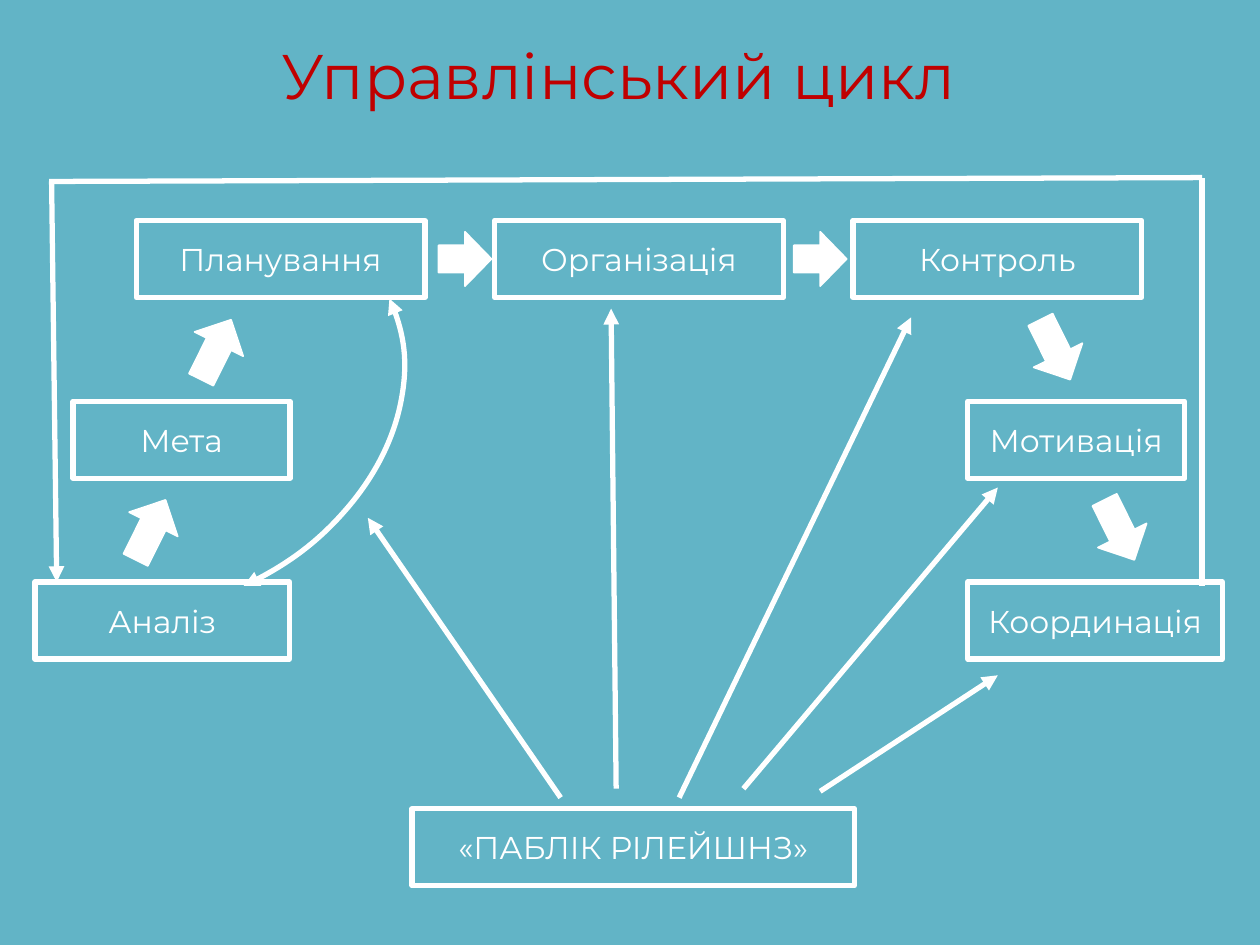
from lxml.etree import SubElement as Sub
from pptx import Presentation
from pptx.dml.color import RGBColor
from pptx.enum.shapes import MSO_CONNECTOR as Link, MSO_SHAPE as Kind
from pptx.enum.text import MSO_ANCHOR as Anchor, MSO_AUTO_SIZE as Fit, PP_ALIGN as Align
from pptx.oxml.ns import qn
from pptx.util import Pt

TEAL = RGBColor(0x62, 0xB4, 0xC6)
WHITE = RGBColor(0xFF, 0xFF, 0xFF)
RED = RGBColor(0xC0, 0x00, 0x00)
FONT = "Montserrat"
TOP, STEP, HIGH = 126, 103.3, 44
WIDE, GAP = 165, 204.8

STAGES = [
    ("Аналіз", 20, 2, 145.5),
    ("Мета", 41.8, 1, 124),
    ("Планування", 77.8, 0, WIDE),
    ("Організація", 77.8 + GAP, 0, WIDE),
    ("Контроль", 77.8 + 2 * GAP, 0, WIDE),
    ("Мотивація", 553, 1, 124),
    ("Координація", 553, 2, 145.5),
]
BLOCKS = [
    (67, 287.3, 38.2, 296.5),
    (104.4, 184.3, 38.2, 296.5),
    (620.6, 287.3, 38.2, 63.6),
    (583.9, 184.3, 38.2, 63.6),
    (250.6, 132.5, 30.2, 0),
    (453.6, 132.5, 30.2, 0),
]
LOOP = [
    ((29.5, 103.7), (32.4, 332.6), True),
    ((28.1, 103.7), (686.9, 101.5), False),
    ((686.9, 334.8), (686.9, 101.5), False),
]
RAYS = [
    ((320.4, 455.8), (210.2, 295.9), True),
    ((352.1, 450.7), (349.2, 176.4), True),
    ((388.1, 455.8), (520.6, 181.4), True),
    ((424.8, 450.7), (570.2, 278.6), True),
    ((468.7, 452.2), (570.2, 385.9), True),
]


def apply(item, form):
    """Set each attribute named in a dict of format values."""
    for name, value in form.items():
        setattr(item, name, value)


def write(shape, words, size, tint, align, frame):
    """Write one formatted paragraph into a shape."""
    text = shape.text_frame
    apply(text, frame)
    para = text.paragraphs[0]
    para.alignment = align
    run = para.add_run()
    run.text = words
    apply(run.font, {"name": FONT, "size": Pt(size)})
    run.font.color.rgb = tint


def stroke(shape, width, *tips):
    """Draw a white line with triangle tips."""
    shape.line.color.rgb = WHITE
    shape.line.width = Pt(width)
    for tip in tips:
        Sub(shape.line._get_or_add_ln(), qn("a:" + tip), type="triangle")


def add_form(slide, kind, place, width, turn=0, fill=None, tips=()):
    """Add a preset shape with a white outline."""
    shape = slide.shapes.add_shape(kind, *map(Pt, place))
    shape.rotation = turn
    shape.shadow.inherit = False
    if fill is None:
        shape.fill.background()
    else:
        shape.fill.solid()
        shape.fill.fore_color.rgb = fill
    stroke(shape, width, *tips)
    return shape


def add_box(slide, words, place):
    """Add a framed box with centred words."""
    box = add_form(slide, Kind.RECTANGLE, place, 3, fill=TEAL)
    frame = {"vertical_anchor": Anchor.MIDDLE, "word_wrap": True}
    write(box, words, 18, WHITE, Align.CENTER, frame)


def add_line(slide, start, end, tip):
    """Add a straight line, with a tip at its end if wanted."""
    line = slide.shapes.add_connector(Link.STRAIGHT, *map(Pt, start + end))
    stroke(line, 3, *(["tailEnd"] if tip else []))
    Sub(line._element.spPr, qn("a:effectLst"))


def add_title(slide, words):
    """Place and fill the title."""
    title = slide.shapes.title
    apply(title, {"left": Pt(153.4), "top": Pt(17.3), "width": Pt(432), "height": Pt(51)})
    frame = {"vertical_anchor": Anchor.TOP, "word_wrap": False, "auto_size": Fit.SHAPE_TO_FIT_TEXT}
    write(title, words, 36, RED, Align.LEFT, frame)


def main():
    """Build the slide and save it."""
    deck = Presentation()
    apply(deck, {"slide_width": Pt(720), "slide_height": Pt(540)})
    slide = deck.slides.add_slide(deck.slide_layouts[5])
    slide.background.fill.solid()
    slide.background.fill.fore_color.rgb = TEAL
    add_title(slide, "Управлінський цикл")
    for words, left, row, width in STAGES:
        add_box(slide, words, (left, TOP + row * STEP, width, HIGH))
    add_box(slide, "«ПАБЛІК РІЛЕЙШНЗ»", (235.5, 462.2, 252.7, HIGH))
    add_form(slide, Kind.ARC, (-22.3, 87.1, 226.8, 290.2), 3, 64.9, tips=("headEnd", "tailEnd"))
    for line in LOOP:
        add_line(slide, *line)
    for left, top, width, turn in BLOCKS:
        add_form(slide, Kind.RIGHT_ARROW, (left, top, width, 31), 1, turn, WHITE)
    for ray in RAYS:
        add_line(slide, *ray)
    deck.save("out.pptx")


if __name__ == "__main__":
    main()
